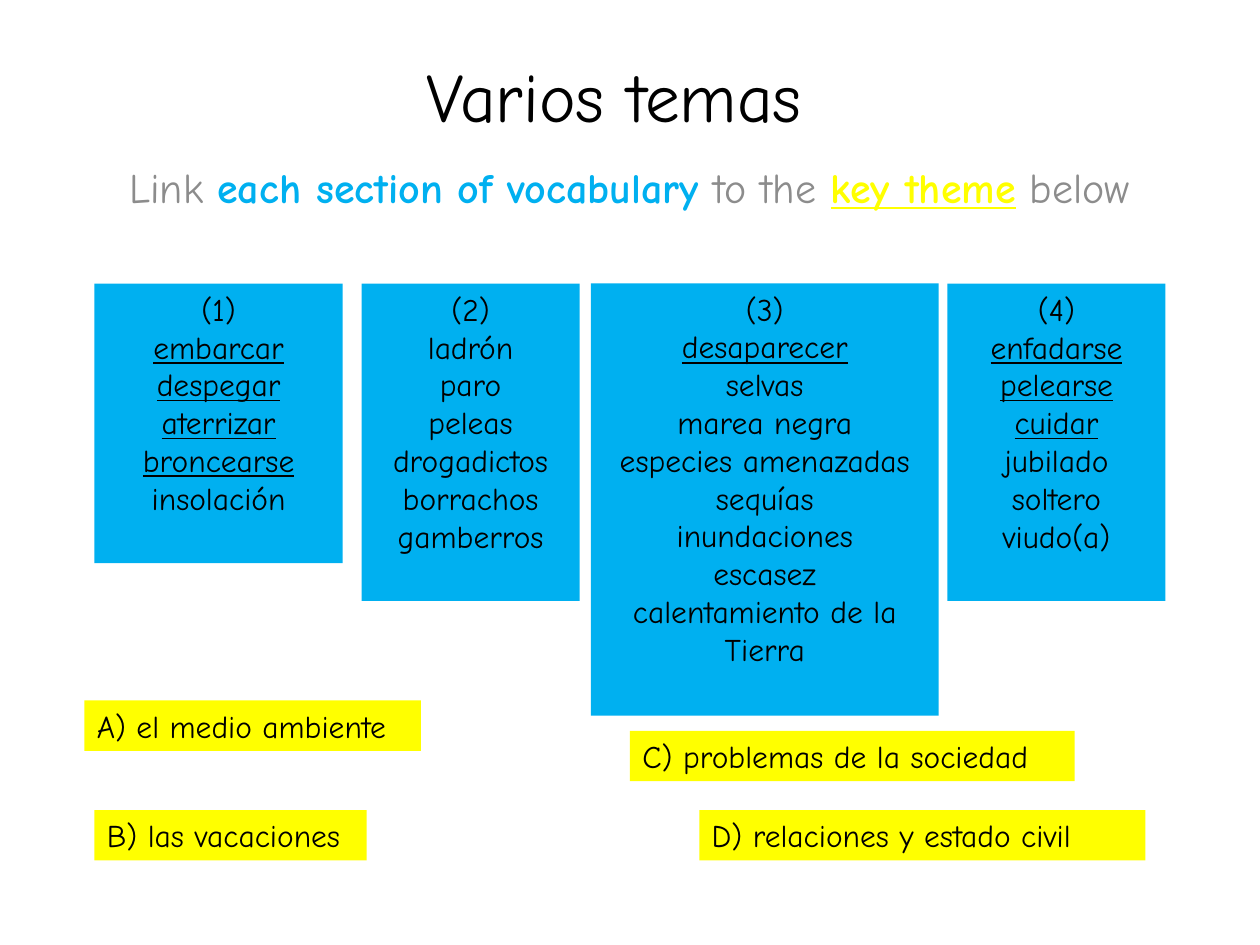
from pptx import Presentation
from pptx.dml.color import RGBColor as RGB
from pptx.enum.shapes import MSO_SHAPE as Shape
from pptx.enum.text import MSO_ANCHOR as Anchor, MSO_AUTO_SIZE as Fit, PP_ALIGN as Align
from pptx.util import Inches, Pt

FONT = "Comic Neue"
COLORS = {"ink": "000000", "grey": "8C8C8C", "blue": "00B0F0", "yellow": "FFFF00"}

# Left, width, height, count of underlined verbs, words
LISTS = [
    (0.75, 1.97, 2.22, 4,
     ["embarcar", "despegar", "aterrizar", "broncearse", "insolación"]),
    (2.87, 1.73, 2.52, 0,
     ["ladrón", "paro", "peleas", "drogadictos", "borrachos", "gamberros"]),
    (4.69, 2.76, 3.43, 1,
     ["desaparecer", "selvas", "marea negra", "especies amenazadas", "sequías",
      "inundaciones", "escasez", "calentamiento de la Tierra"]),
    (7.52, 1.73, 2.52, 3,
     ["enfadarse", "pelearse", "cuidar", "jubilado", "soltero", "viudo(a)"]),
]

# Left, top, width, text
THEMES = [
    (0.67, 5.56, 2.67, "A) el medio ambiente"),
    (0.75, 6.43, 2.16, "B) las vacaciones"),
    (5.0, 5.8, 3.53, "C) problemas de la sociedad"),
    (5.55, 6.43, 3.54, "D) relaciones y estado civil"),
]

# Text, colour, stressed, underlined
TASK = [
    ("Link ", "grey", False, False),
    ("each section of vocabulary ", "blue", True, False),
    ("to the ", "grey", False, False),
    ("key theme", "yellow", True, True),
    (" below", "grey", False, False),
]


def paint(font, size, color="ink"):
    font.name = FONT
    font.size = Pt(size)
    font.color.rgb = RGB.from_string(COLORS[color])


def add_title(slide, box):
    title = slide.shapes.title
    title.left, title.top, title.width, title.height = map(Inches, box)
    frame = title.text_frame
    frame.text = "Varios temas"
    frame.auto_size = Fit.NONE
    frame.vertical_anchor = Anchor.MIDDLE
    para = frame.paragraphs[0]
    para.alignment = Align.CENTER
    paint(para.font, 39.6)


def add_task(slide, box):
    frame = slide.shapes.add_textbox(*map(Inches, box)).text_frame
    frame.word_wrap = True
    para = frame.paragraphs[0]
    para.alignment = Align.CENTER
    for text, color, bold, line in TASK:
        run = para.add_run()
        run.text = text
        paint(run.font, 24, color)
        run.font.bold = bold
        run.font.underline = line


def add_card(slide, box, color, lines, align, verbs=0):
    """Filled box of text lines; the verbs after the heading are underlined."""
    card = slide.shapes.add_shape(Shape.RECTANGLE, *map(Inches, box))
    card.shadow.inherit = False
    card.fill.solid()
    card.fill.fore_color.rgb = RGB.from_string(COLORS[color])
    card.line.fill.background()
    frame = card.text_frame
    frame.word_wrap = True
    frame.vertical_anchor = Anchor.TOP
    frame.text = "\n".join(lines)
    for i, para in enumerate(frame.paragraphs):
        para.alignment = align
        paint(para.font, 18)
        if 1 <= i <= verbs:
            para.runs[0].font.underline = True


def add_lists(slide, top):
    for num, (left, width, height, verbs, words) in enumerate(LISTS, 1):
        add_card(slide, (left, top, width, height), "blue",
                 [f"({num})", *words], Align.CENTER, verbs)


def add_themes(slide, height):
    for left, top, width, text in THEMES:
        add_card(slide, (left, top, width, height), "yellow", [text], Align.LEFT)


def main():
    deck = Presentation()
    deck.slide_width, deck.slide_height = Inches(10), Inches(7.5)
    slide = deck.slides.add_slide(deck.slide_layouts[5])
    # Heading and task
    add_title(slide, (0.35, 0.36, 9.05, 0.79))
    add_task(slide, (0.35, 1.23, 9.29, 0.71))
    # Vocabulary and themes
    add_lists(slide, 2.25)
    add_themes(slide, 0.4)
    deck.save("out.pptx")


if __name__ == "__main__":
    main()
